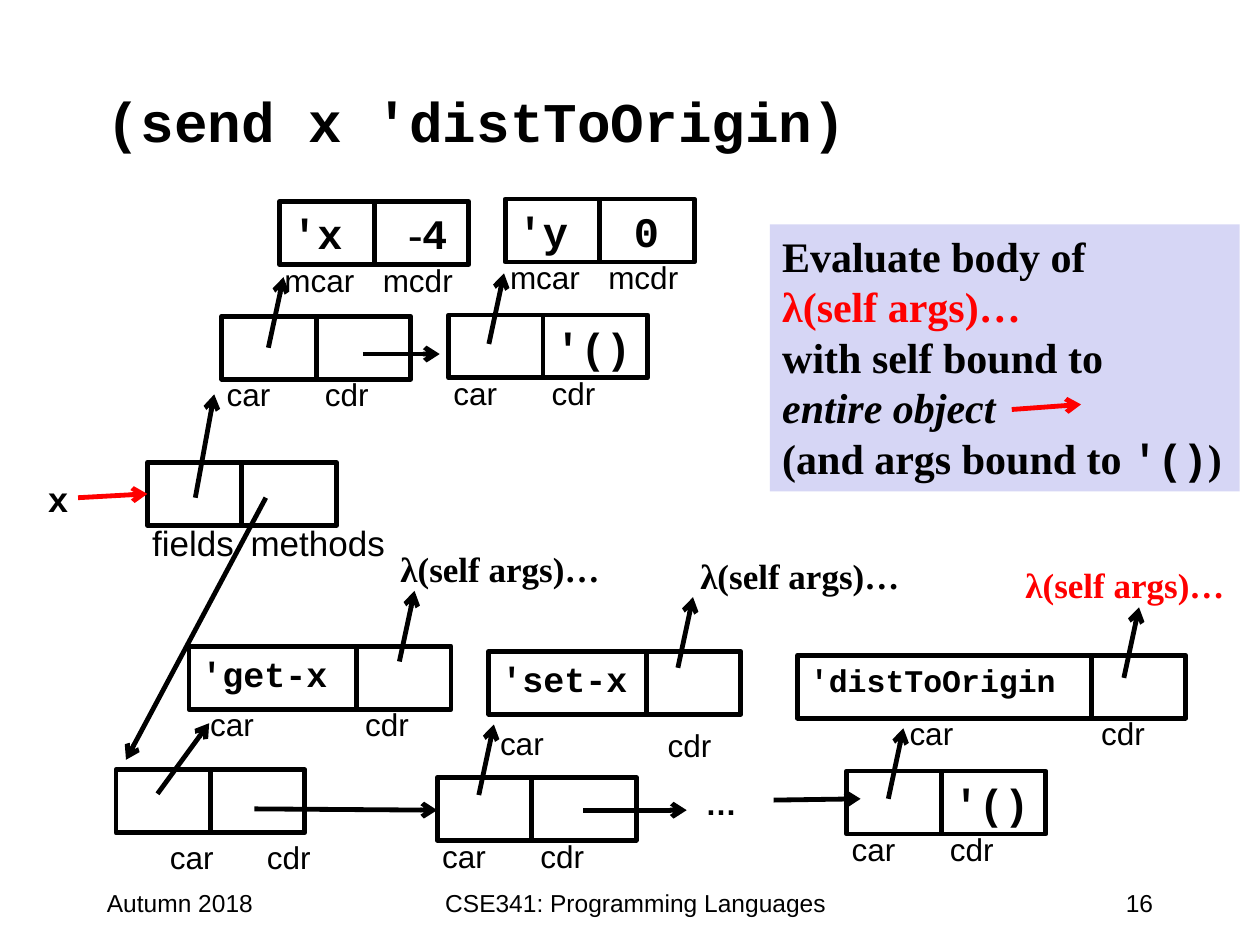
from pptx import Presentation
from pptx.dml.color import RGBColor
from pptx.enum import shapes, text
from pptx.oxml import parse_xml
from pptx.oxml.ns import nsdecls
from pptx.util import Inches, Pt

BLACK, RED, LILAC = "000000", "FF0000", "D6D6F5"
SANS, MONO, SERIF = "Arial", "Courier New", "Times New Roman"
LINE = 2.75
CELL_W, WIDE_W, CELL_H = 0.75, 0.83, 0.5
LABEL_DROP = 0.42
LABEL_W = {"car": 0.55, "cdr": 0.55, "mcar": 0.76, "mcdr": 0.76,
           "fields": 0.86, "methods": 1.28}
LEFT, CENTER, RIGHT = text.PP_ALIGN.LEFT, text.PP_ALIGN.CENTER, text.PP_ALIGN.RIGHT

FOOTERS = [
    ("Autumn 2018", 0.75, 2.08, LEFT),
    ("16", 7.17, 2.08, RIGHT),
    ("CSE341: Programming Languages", 3.17, 3.75, CENTER),
]

NAMES, MNAMES = ("car", "cdr"), ("mcar", "mcdr")
EMPTY = ("", 24)
NULL = ("'()", 24)

# left, top, widths, contents, labels
PAIRS = [
    (1.17, 3.67, (CELL_W, CELL_W), (EMPTY, EMPTY), ("fields", "methods")),
    (2.22, 1.6, (CELL_W, CELL_W), (("'x", 24), ("-4", 24)), MNAMES),
    (1.76, 2.51, (CELL_W, CELL_W), (EMPTY, EMPTY), NAMES),
    (4.01, 1.58, (CELL_W, CELL_W), (("'y", 24), ("0", 24)), MNAMES),
    (3.56, 2.5, (CELL_W, WIDE_W), (EMPTY, NULL), NAMES),
    (1.5, 5.13, (1.33, CELL_W), (("'get-x", 20), EMPTY), NAMES),
    (0.92, 6.11, (CELL_W, CELL_W), (EMPTY, EMPTY), NAMES),
    (3.88, 5.17, (1.25, CELL_W), (("'set-x", 20), EMPTY), NAMES),
    (3.47, 6.17, (CELL_W, WIDE_W), (EMPTY, EMPTY), NAMES),
    (6.33, 5.2, (2.33, CELL_W), (("'distToOrigin", 18), EMPTY), NAMES),
    (6.72, 6.12, (CELL_W, WIDE_W), (EMPTY, NULL), NAMES),
]
MOVED_LABELS = {
    (1.5, 5.13): ((1.57, 5.55), (2.8, 5.55)),
    (0.92, 6.11): ((1.25, 6.6), (2.02, 6.6)),
    (3.88, 5.17): ((3.87, 5.7), (5.2, 5.71)),
    (6.33, 5.2): ((7.12, 5.62), (8.64, 5.62)),
}

CAPTIONS = [
    ("x", 0.28, 3.74, 0.37, 20, MONO, BLACK),
    ("…", 5.5, 6.17, 0.45, 18, SANS, BLACK),
    ("λ(self args)…", 3.08, 4.3, 1.87, 20, SERIF, BLACK),
    ("λ(self args)…", 5.46, 4.35, 1.87, 20, SERIF, BLACK),
    ("λ(self args)…", 8.04, 4.42, 1.87, 20, SERIF, RED),
]

NOTE = [
    [("Evaluate body of", SERIF, BLACK, False)],
    [("λ(self args)…", SERIF, RED, False)],
    [("with self bound to", SERIF, BLACK, False)],
    [("entire object", SERIF, BLACK, True)],
    [("(and args bound to ", SERIF, BLACK, False), ("'()", MONO, BLACK, False),
     (")", SERIF, BLACK, False)],
]

ARROWS = [
    (0.62, 3.95, 1.17, 3.92, RED), (1.55, 3.95, 1.7, 3.13, BLACK),
    (2.13, 2.76, 2.25, 2.2, BLACK), (2.88, 2.81, 3.49, 2.81, BLACK),
    (3.88, 2.73, 4, 2.17, BLACK), (1.25, 6.3, 1.66, 5.74, BLACK),
    (2.02, 6.42, 3.47, 6.43, BLACK), (3.8, 6.31, 3.92, 5.75, BLACK),
    (2.11, 3.95, 1, 6.03, BLACK), (7.05, 6.34, 7.17, 5.78, BLACK),
    (4.63, 6.43, 5.45, 6.43, BLACK), (6.14, 6.35, 6.83, 6.34, BLACK),
    (3.17, 5.25, 3.29, 4.69, BLACK), (5.38, 5.3, 5.5, 4.74, BLACK),
    (8.92, 5.38, 9.04, 4.82, BLACK), (8.03, 3.25, 8.58, 3.21, RED),
]

prs = Presentation()
prs.slide_width, prs.slide_height = Inches(10), Inches(7.5)
s = prs.slides.add_slide(prs.slide_layouts[6])


def rgb(value):
    return RGBColor.from_string(value)


def style(font, size, name, color=BLACK, bold=False, italic=False):
    font.size, font.name, font.bold, font.italic = Pt(size), name, bold, italic
    font.color.rgb = rgb(color)


def add_text(words, x, y, w, h, size, name, color=BLACK, bold=False,
             align=LEFT, wrap=False):
    box = s.shapes.add_textbox(Inches(x), Inches(y), Inches(w), Inches(h))
    tf = box.text_frame
    tf.word_wrap = wrap
    p = tf.paragraphs[0]
    p.text, p.alignment = words, align
    style(p.font, size, name, color, bold)
    return box


def add_cell(x, y, w, words, size):
    sp = s.shapes.add_shape(shapes.MSO_SHAPE.RECTANGLE,
                            Inches(x), Inches(y), Inches(w), Inches(CELL_H))
    sp.shadow.inherit = False
    sp.fill.background()
    sp.line.color.rgb = rgb(BLACK)
    sp.line.width = Pt(LINE)
    if not words:
        return
    tf = sp.text_frame
    tf.vertical_anchor = text.MSO_ANCHOR.TOP
    p = tf.paragraphs[0]
    p.alignment = LEFT
    if not words.startswith("'"):
        tf.margin_left = Inches(0.27)
    for part in (["-", words[1:]] if words.startswith("-") else [words]):
        r = p.add_run()
        r.text = part
        style(r.font, size, SERIF if part == "-" else MONO, bold=True)


def add_pair(x, y, widths, contents, labels):
    lefts = (x, x + widths[0])
    spots = MOVED_LABELS.get((x, y), ((x - 0.06, y + LABEL_DROP),
                                      (lefts[1] - 0.03, y + LABEL_DROP)))
    for left, w, (words, size), label, spot in zip(lefts, widths, contents, labels, spots):
        add_cell(left, y, w, words, size)
        add_text(label, *spot, LABEL_W[label], 0.4,
                 20 if label in ("fields", "methods") else 18, SANS)


def add_arrow(x1, y1, x2, y2, color):
    c = s.shapes.add_connector(shapes.MSO_CONNECTOR.STRAIGHT,
                               Inches(x1), Inches(y1), Inches(x2), Inches(y2))
    c.line.color.rgb = rgb(color)
    c.line.width = Pt(LINE)
    c.line._get_or_add_ln().append(parse_xml(f'<a:tailEnd {nsdecls("a")} type="arrow"/>'))
    c._element.spPr.append(parse_xml(f'<a:effectLst {nsdecls("a")}/>'))


title = add_text("(send x 'distToOrigin)", 0.75, 0.33, 8.83, 1.25, 32, MONO,
                 bold=True, wrap=True)
title.text_frame.vertical_anchor = text.MSO_ANCHOR.MIDDLE
for words, x, w, align in FOOTERS:
    add_text(words, x, 7, w, 0.5, 14, SANS, align=align, wrap=True)
for pair in PAIRS:
    add_pair(*pair)
for words, x, y, w, size, name, color in CAPTIONS:
    add_text(words, x, y, w, 0.44 if size == 20 else 0.4, size, name, color, bold=True)

note = s.shapes.add_textbox(Inches(6.11), Inches(1.78), Inches(3.73), Inches(2.12))
note.fill.solid()
note.fill.fore_color.rgb = rgb(LILAC)
tf = note.text_frame
tf.word_wrap = False
for i, line in enumerate(NOTE):
    p = tf.add_paragraph() if i else tf.paragraphs[0]
    for words, name, color, italic in line:
        r = p.add_run()
        r.text = words
        style(r.font, 24, name, color, True, italic)

for arrow in ARROWS:
    add_arrow(*arrow)
prs.save("out.pptx")
